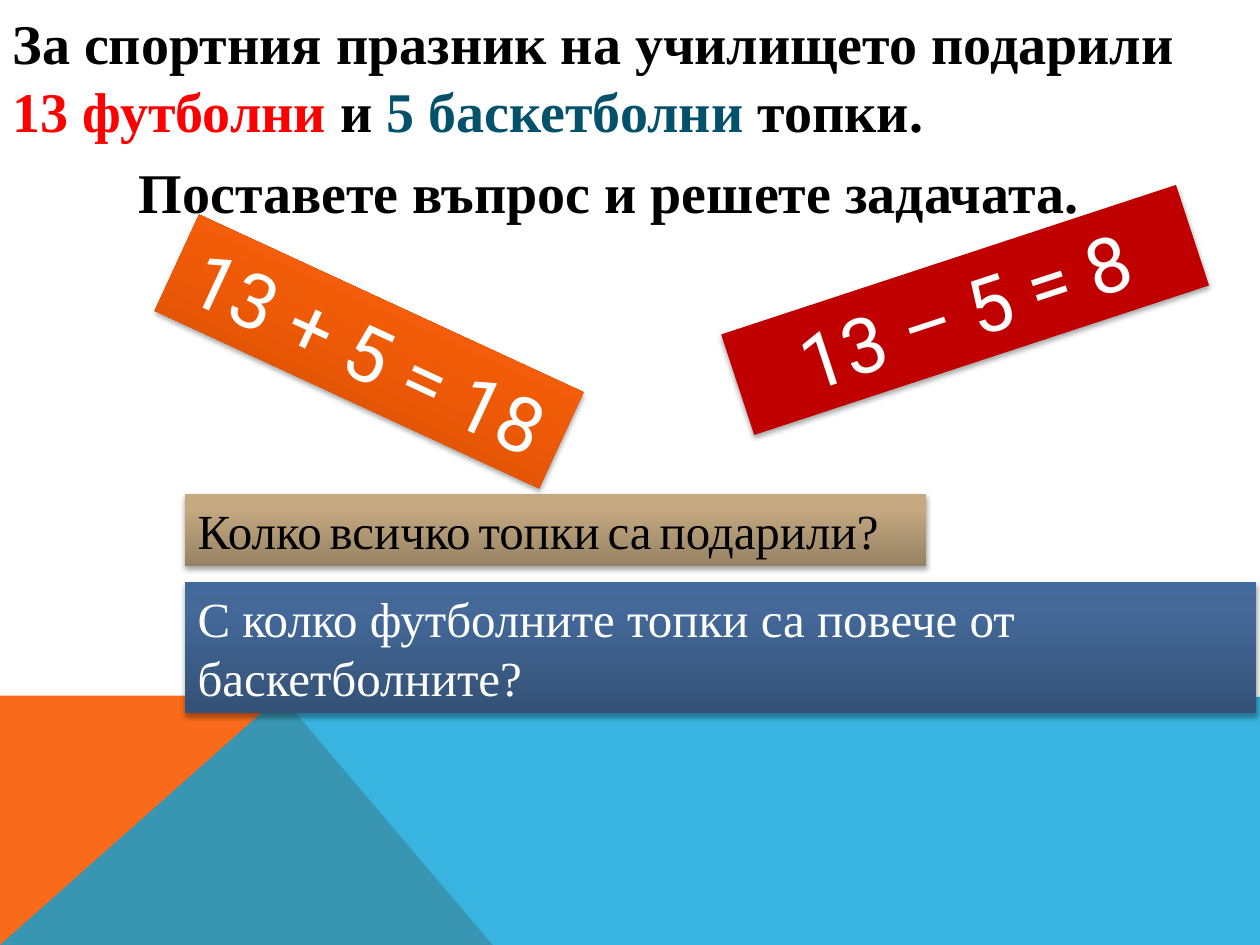
from copy import deepcopy

from lxml import etree
from pptx import Presentation
from pptx import util as u
from pptx.dml.color import RGBColor
from pptx.enum import shapes, text
from pptx.oxml import ns

BLACK = RGBColor(0x00, 0x00, 0x00)
WHITE = RGBColor(0xFF, 0xFF, 0xFF)
RED = RGBColor(0xFF, 0x00, 0x00)
TEAL = RGBColor(0x04, 0x51, 0x6C)
CRIMSON = RGBColor(0xC0, 0x00, 0x00)
ORANGE = RGBColor(0xF9, 0x6A, 0x1B)
SKY = RGBColor(0x08, 0xA1, 0xD9)
# Gradients run from bottom to top
BLUES = [RGBColor(0x34, 0x51, 0x76), RGBColor(0x44, 0x69, 0x99), RGBColor(0x42, 0x6A, 0x9C)]
SANDS = [RGBColor(0x97, 0x82, 0x63), RGBColor(0xC4, 0xA9, 0x81), RGBColor(0xC6, 0xAA, 0x80)]
FLAMES = [RGBColor(0xCE, 0x49, 0x00), RGBColor(0xFF, 0x63, 0x0C), RGBColor(0xFF, 0x64, 0x0E)]


def sub(parent, tag, **attrs):
    return etree.SubElement(parent, ns.qn(tag), attrs)


class Page:
    serif = "Times New Roman"
    sans = "Roboto"

    def __init__(self, slide):
        self.slide = slide

    def style(self, font, name, size, color=None, bold=None):
        font.name, font.size, font.bold = name, u.Pt(size), bold
        if color is not None:
            font.color.rgb = color

    def area(self, points, color, alpha=None):
        """Filled polygon with corners in inches."""
        start, *rest = [(u.Inches(x), u.Inches(y)) for x, y in points]
        form = self.slide.shapes.build_freeform(*start)
        form.add_line_segments(rest)
        shape = form.convert_to_shape()
        shape.shadow.inherit = False
        shape.line.fill.background()
        shape.fill.solid()
        shape.fill.fore_color.rgb = color
        if alpha:
            clr = shape._element.spPr.find(".//" + ns.qn("a:srgbClr"))
            sub(clr, "a:alpha", val=str(alpha * 1000))

    def body(self, box, paras):
        """Fill the body placeholder; each paragraph is (indent, runs)."""
        hold = self.slide.placeholders[1]
        hold.left, hold.top, hold.width, hold.height = map(u.Inches, box)
        frame = hold.text_frame
        frame.word_wrap = True
        frame.auto_size = text.MSO_AUTO_SIZE.NONE
        frame.margin_right = u.Inches(0.3)
        for i, (indent, runs) in enumerate(paras):
            para = frame.add_paragraph() if i else frame.paragraphs[0]
            props = para._p.get_or_add_pPr()
            props.set("marL", "0")
            props.set("indent", str(u.Inches(indent)))
            sub(props, "a:buNone")
            para.space_before = u.Pt(8 if i else 0)
            self.style(para.font, self.serif, 32, bold=True)
            for words, color in runs:
                run = para.add_run()
                run.text = words
                self.style(run.font, self.serif, 32, color, True)

    def shade(self, fill, shape, colors):
        """Three-stop gradient."""
        fill.gradient()
        fill.gradient_angle = 90
        stops = shape._element.spPr.find(".//" + ns.qn("a:gsLst"))
        stops.append(deepcopy(stops[-1]))
        for stop, color, pos in zip(fill.gradient_stops, colors, (0, 0.8, 1)):
            stop.color.rgb = color
            stop.position = pos

    def card(self, box, fill, turn=0):
        """Shadowed rectangle; returns its paragraph."""
        shape = self.slide.shapes.add_shape(
            shapes.MSO_SHAPE.RECTANGLE, *map(u.Inches, box))
        shape.rotation = turn
        shape.line.fill.background()
        if isinstance(fill, list):
            self.shade(shape.fill, shape, fill)
        else:
            shape.fill.solid()
            shape.fill.fore_color.rgb = fill
        shape.shadow.inherit = False
        glow = sub(shape._element.spPr.find(ns.qn("a:effectLst")), "a:outerShdw",
                   blurRad=str(u.Pt(3.1)), dist=str(u.Pt(1.8)),
                   dir="5400000", rotWithShape="0")
        sub(sub(glow, "a:srgbClr", val=str(BLACK)), "a:alpha", val="35000")
        frame = shape.text_frame
        frame.word_wrap = True
        frame.auto_size = text.MSO_AUTO_SIZE.SHAPE_TO_FIT_TEXT
        frame.vertical_anchor = text.MSO_ANCHOR.TOP
        return frame.paragraphs[0]

    def ask(self, box, fill, words, color, gap=None):
        """Question card; gap sets the size of the spaces between words."""
        para = self.card(box, fill)
        para.alignment = text.PP_ALIGN.LEFT
        if gap is None:
            para.text = words
            self.style(para.font, self.serif, 28, color)
            return
        for i, word in enumerate(words.split()):
            if i:
                space = para.add_run()
                space.text = " "
                self.style(space.font, self.sans, gap, WHITE)
            run = para.add_run()
            run.text = word
            self.style(run.font, self.serif, 28, color)

    def sum(self, box, fill, words, turn):
        """Tilted equation card."""
        para = self.card(box, fill, turn)
        para.text = words
        para.alignment = text.PP_ALIGN.CENTER
        self.style(para.font, self.sans, 44, WHITE)


def main():
    deck = Presentation()
    deck.slide_width, deck.slide_height = u.Inches(10), u.Inches(7.5)
    slide = deck.slides.add_slide(deck.slide_layouts[1])
    title = slide.shapes.title._element
    title.getparent().remove(title)
    page = Page(slide)

    # Coloured base
    page.area([(0, 7.5), (0, 5.52), (2.23, 5.52), (3.91, 7.5)], ORANGE)
    page.area([(0, 7.5), (2.23, 5.52), (10, 5.53), (10, 7.5)], SKY, 80)

    # Word problem
    page.body((0, 0.02, 9.98, 2.15), [
        (0, [("За спортния празник на училището подарили ", BLACK),
             ("13 футболни ", RED), ("и ", BLACK),
             ("5 баскетболни ", TEAL), ("топки.", BLACK)]),
        (1, [("Поставете въпрос и решете задачата.", BLACK)]),
    ])

    # Questions
    page.ask((1.47, 4.62, 8.5, 1.04), BLUES,
             "С колко футболните топки са повече от баскетболните?", WHITE)
    page.ask((1.47, 3.92, 5.88, 0.57), SANDS,
             "Колко всичко топки са подарили?", BLACK, gap=18)

    # Equations
    page.sum((1.25, 2.37, 3.36, 0.84), FLAMES, "13 + 5 = 18", 24.8)
    page.sum((5.76, 2.04, 3.8, 0.84), CRIMSON, "13 – 5 = 8", 341.8)

    deck.save("out.pptx")


if __name__ == "__main__":
    main()
